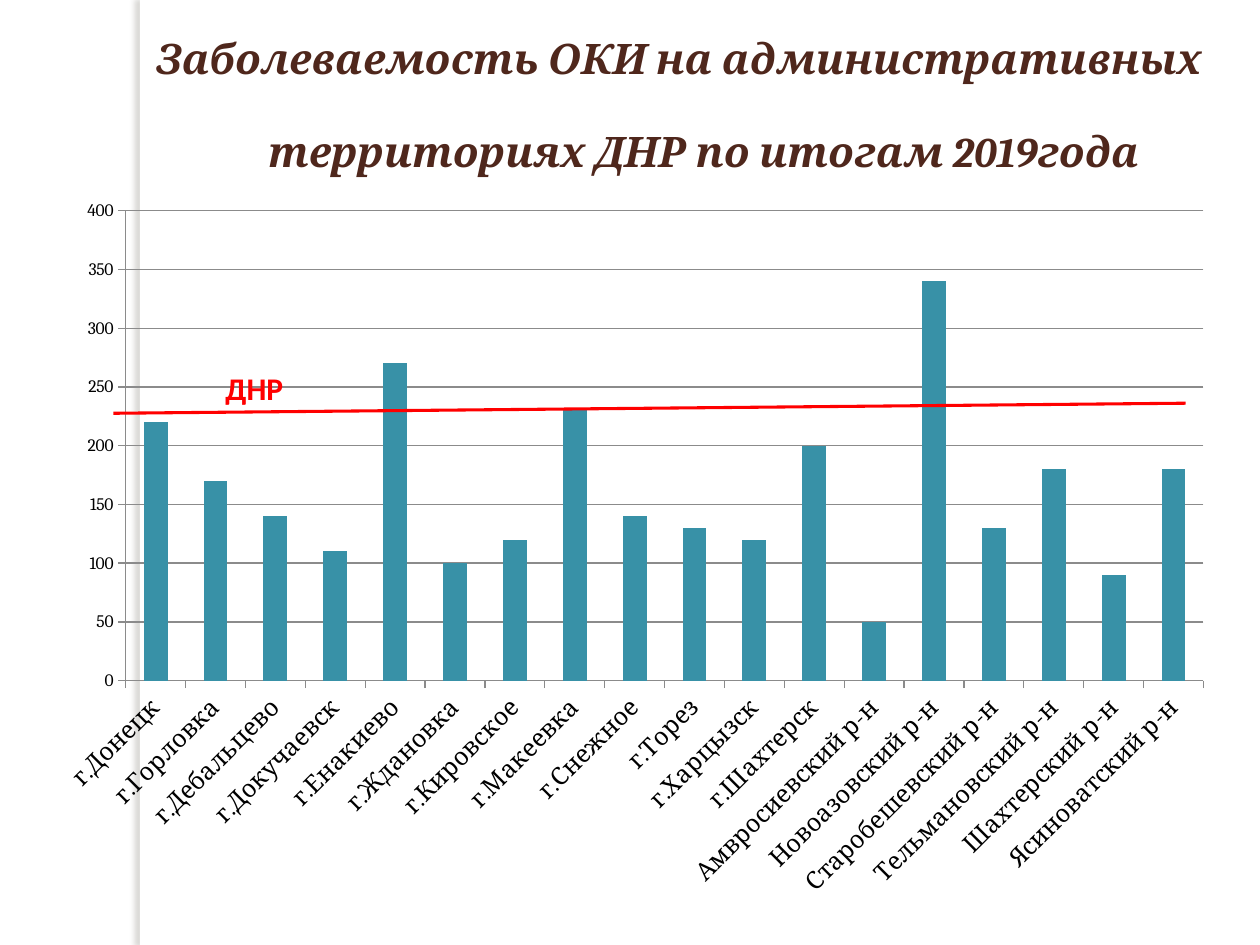
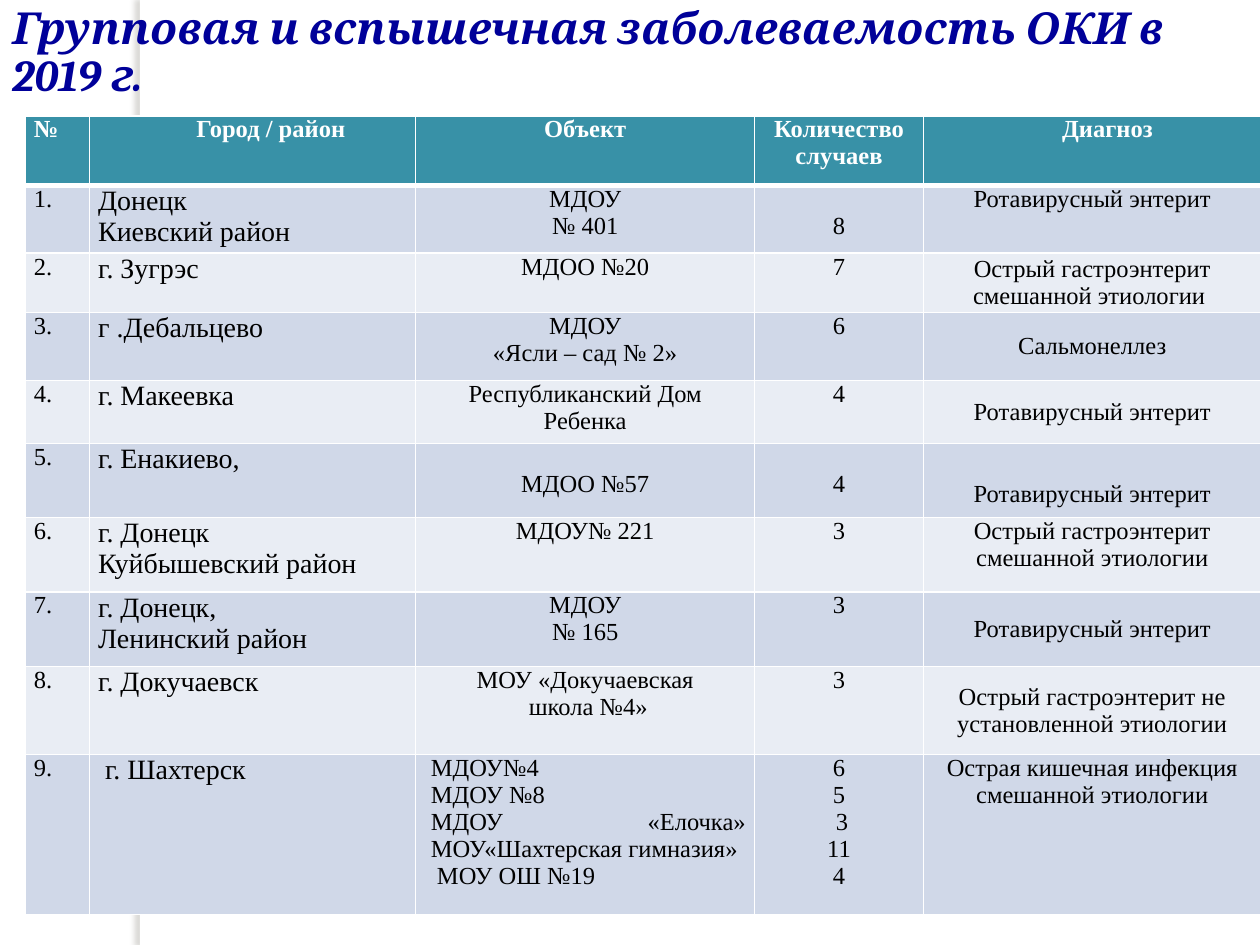
from lxml.etree import SubElement
from pptx import Presentation
from pptx.chart.data import CategoryChartData
from pptx.dml.color import RGBColor
from pptx.enum.chart import XL_CHART_TYPE, XL_TICK_MARK
from pptx.enum.shapes import MSO_CONNECTOR, MSO_SHAPE
from pptx.enum.text import MSO_ANCHOR, PP_ALIGN
from pptx.oxml import parse_xml
from pptx.oxml.ns import nsdecls, qn
from pptx.util import Inches, Pt

WIDTH, HEIGHT = 10, 7.5
TEAL, WHITE, BLACK, RED, GRAY = "3891A7", "FFFFFF", "000000", "FF0000", "8B8B8B"
BROWN, NAVY = "4F271C", "000099"
ROW_BANDS = ("D0D8E8", "E9EDF4")
HEADING_FONT, LABEL_FONT, TABLE_FONT = "Cambria", "Calibri", "Times New Roman"

INCIDENCE_TITLE = ("Заболеваемость ОКИ на административных",
                   "территориях ДНР по итогам 2019года")
INCIDENCE = {
    "г.Донецк": 220, "г.Горловка": 170, "г.Дебальцево": 140,
    "г.Докучаевск": 110, "г.Енакиево": 270, "г.Ждановка": 100,
    "г.Кировское": 120, "г.Макеевка": 230, "г.Снежное": 140,
    "г.Торез": 130, "г.Харцызск": 120, "г.Шахтерск": 200,
    "Амвросиевский р-н": 50, "Новоазовский р-н": 340,
    "Старобешевский р-н": 130, "Тельмановский р-н": 180,
    "Шахтерский р-н": 90, "Ясиноватский р-н": 180,
}
AVERAGE_LABEL = "ДНР"

OUTBREAK_TITLE = "Групповая и вспышечная заболеваемость ОКИ в 2019 г."
HEADER = ("№", "Город / район", "Объект", "Количество\nслучаев", "Диагноз")
ROTAVIRUS = "Ротавирусный энтерит"
OUTBREAKS = [  # town, institution, cases, diagnosis
    ("Донецк\nКиевский район", "МДОУ\n№ 401", "8", ROTAVIRUS),
    ("г. Зугрэс", "МДОО №20", "7", "Острый гастроэнтерит смешанной этиологии "),
    ("г .Дебальцево", "МДОУ\n«Ясли – сад № 2»", "6", "Сальмонеллез"),
    ("г. Макеевка", "Республиканский Дом Ребенка", "4", ROTAVIRUS),
    ("г. Енакиево,", "МДОО №57", "4", ROTAVIRUS),
    ("г. Донецк\nКуйбышевский район", "МДОУ№ 221", "3",
     "Острый гастроэнтерит\nсмешанной этиологии"),
    ("г. Донецк,\nЛенинский район", "МДОУ\n№ 165", "3", ROTAVIRUS),
    ("г. Докучаевск", "МОУ «Докучаевская\n школа №4»", "3",
     "Острый гастроэнтерит не установленной этиологии"),
    (" г. Шахтерск",
     "МДОУ№4\nМДОУ №8\nМДОУ «Елочка» МОУ«Шахтерская гимназия»\n МОУ ОШ №19",
     "6\n5\n 3\n11\n4", "Острая кишечная инфекция смешанной этиологии"),
]
COLUMN_WIDTHS = (0.51, 2.59, 2.69, 1.34, 2.68)
ROW_HEIGHTS = (0.55, 0.54, 0.47, 0.54, 0.5, 0.59, 0.59, 0.59, 0.7, 1.27)
NUMBER, TOWN, INSTITUTION, CASES, DIAGNOSIS = range(5)
LINE_DROP = 0.22  # height of one 14 pt line
DROPPED = {(1, CASES), (5, INSTITUTION), (5, CASES), (5, DIAGNOSIS)}
TOP_DIAGNOSES = {1, 6, 9}
HEADER_SHIFT = {TOWN: 0.29, DIAGNOSIS: 0.24}


def rgb(color):
    return RGBColor.from_string(color)


def set_font(font, name, size, color, bold=False, italic=False):
    font.name, font.size, font.bold, font.italic = name, Pt(size), bold, italic
    font.color.rgb = rgb(color)


def add_slide(prs):
    """Blank slide with the white strip that casts a shadow to its left."""
    slide = prs.slides.add_slide(prs.slide_layouts[6])
    strip = slide.shapes.add_shape(MSO_SHAPE.RECTANGLE, Inches(1.11), 0,
                                   Inches(0.08), Inches(HEIGHT))
    strip.fill.solid()
    strip.fill.fore_color.rgb = rgb(WHITE)
    strip.line.fill.background()
    strip.shadow.inherit = False
    strip._element.spPr.find(qn("a:effectLst")).append(parse_xml(
        f'<a:outerShdw {nsdecls("a")} blurRad="{Pt(3)}" dist="{Pt(3)}" '
        'dir="10800000" algn="tl" rotWithShape="0"><a:srgbClr val="736F63">'
        '<a:alpha val="25000"/></a:srgbClr></a:outerShdw>'))
    return slide


def add_text(slide, box, lines, *font):
    frame = slide.shapes.add_textbox(*map(Inches, box)).text_frame
    frame.word_wrap = True
    frame.text = "\n".join(lines)
    for paragraph in frame.paragraphs:
        set_font(paragraph.font, *font)
    return frame


def add_incidence_chart(slide):
    data = CategoryChartData()
    data.categories = list(INCIDENCE)
    data.add_series("Series 1", list(INCIDENCE.values()))
    chart = slide.shapes.add_chart(
        XL_CHART_TYPE.COLUMN_CLUSTERED,
        *map(Inches, (0.34, 1.5, 9.4, 5.74)), data).chart
    chart.has_legend = chart.has_title = False
    set_font(chart.font, HEADING_FONT, 10, BLACK)

    plot = chart.plots[0]
    plot.gap_width, plot.vary_by_categories = 150, False
    bars = plot.series[0].format.fill
    bars.solid()
    bars.fore_color.rgb = rgb(TEAL)

    towns, scale = chart.category_axis, chart.value_axis
    scale.minimum_scale, scale.maximum_scale, scale.major_unit = 0, 400, 50
    scale.has_major_gridlines = True
    for axis in (towns, scale):
        axis.major_tick_mark = XL_TICK_MARK.OUTSIDE
    for part in (towns, scale, scale.major_gridlines):
        part.format.line.color.rgb = rgb(GRAY)
        part.format.line.width = Pt(0.75)
    set_font(towns.tick_labels.font, HEADING_FONT, 14, BLACK)
    towns._element.txPr.find(qn("a:bodyPr")).set("rot", "-2700000")

    area = chart._chartSpace.chart.plotArea
    for old in area.findall(qn("c:layout")):
        area.remove(old)
    layout = parse_xml(f'<c:layout {nsdecls("c")}><c:manualLayout/></c:layout>')
    settings = {"layoutTarget": "inner", "xMode": "edge", "yMode": "edge",
                "x": 0.07, "y": 0.03, "w": 0.91, "h": 0.65}
    for tag, value in settings.items():
        SubElement(layout[0], qn(f"c:{tag}")).set("val", str(value))
    area.insert(0, layout)


def build_incidence(prs):
    slide = add_slide(prs)
    add_incidence_chart(slide)
    average = slide.shapes.add_connector(
        MSO_CONNECTOR.STRAIGHT, *map(Inches, (0.9, 3.28, 9.41, 3.2)))
    average.line.color.rgb = rgb(RED)
    average.line.width = Pt(1.75)
    SubElement(average._element.spPr, qn("a:effectLst"))

    title = add_text(slide, (1.14, 0.21, 8.86, 0.91), INCIDENCE_TITLE,
                     HEADING_FONT, 24, BROWN, True, True)
    second = title.paragraphs[1]
    second.space_before = Pt(24)
    second._p.get_or_add_pPr().set("marL", str(Inches(0.89)))
    add_text(slide, (1.69, 2.88, 3.68, 0.4), [AVERAGE_LABEL],
             LABEL_FONT, 18, RED, True)


def add_borders(cell, top, bottom):
    """White borders; top and bottom are widths in points."""
    properties = cell._tc.get_or_add_tcPr()
    for side, width in zip("LRTB", (1, 1, top, bottom)):
        properties.append(parse_xml(
            f'<a:ln{side} {nsdecls("a")} w="{Pt(width)}"><a:solidFill>'
            f'<a:srgbClr val="{WHITE}"/></a:solidFill></a:ln{side}>'))


def fill_cell(cell, row, column, text):
    is_header = row == 0
    add_borders(cell, 3 if row == 1 else 1, 3 if is_header else 1)
    cell.fill.solid()
    cell.fill.fore_color.rgb = rgb(TEAL if is_header else ROW_BANDS[(row - 1) % 2])
    shift = HEADER_SHIFT.get(column, 0) if is_header else 0
    cell.margin_left, cell.margin_right = Inches(0.07 + shift), Inches(0.07)
    cell.margin_top = Inches(LINE_DROP if (row, column) in DROPPED else 0)
    cell.margin_bottom = 0
    centred_down = column == DIAGNOSIS and not is_header and row not in TOP_DIAGNOSES
    cell.vertical_anchor = MSO_ANCHOR.MIDDLE if centred_down else MSO_ANCHOR.TOP

    justified = row == len(OUTBREAKS) and column == INSTITUTION
    if justified:
        align = PP_ALIGN.JUSTIFY
    elif column == NUMBER or (column == TOWN and not is_header):
        align = PP_ALIGN.LEFT
    else:
        align = PP_ALIGN.CENTER
    size = 16 if column == TOWN and not is_header else 14
    cell.text = text
    for paragraph in cell.text_frame.paragraphs:
        paragraph.alignment = align
        set_font(paragraph.font, TABLE_FONT, size,
                 WHITE if is_header else BLACK, is_header)
        if justified:
            paragraph._p.get_or_add_pPr().set("marL", str(Inches(0.05)))


def build_outbreaks(prs):
    slide = add_slide(prs)
    title = add_text(slide, (0, 0, WIDTH, 0.52), [OUTBREAK_TITLE],
                     HEADING_FONT, 25.2, NAVY, True, True)
    title.paragraphs[0].line_spacing = 0.9

    rows = [HEADER] + [(f"{n}.", *case) for n, case in enumerate(OUTBREAKS, 1)]
    table = slide.shapes.add_table(
        len(rows), len(HEADER), Inches(0.2), Inches(0.92),
        Inches(sum(COLUMN_WIDTHS)), Inches(sum(ROW_HEIGHTS))).table
    for column, width in zip(table.columns, COLUMN_WIDTHS):
        column.width = Inches(width)
    for row, height in zip(table.rows, ROW_HEIGHTS):
        row.height = Inches(height)
    for r, texts in enumerate(rows):
        for c, text in enumerate(texts):
            fill_cell(table.cell(r, c), r, c, text)


def main():
    prs = Presentation()
    prs.slide_width, prs.slide_height = Inches(WIDTH), Inches(HEIGHT)
    build_incidence(prs)
    build_outbreaks(prs)
    prs.save("out.pptx")


if __name__ == "__main__":
    main()
